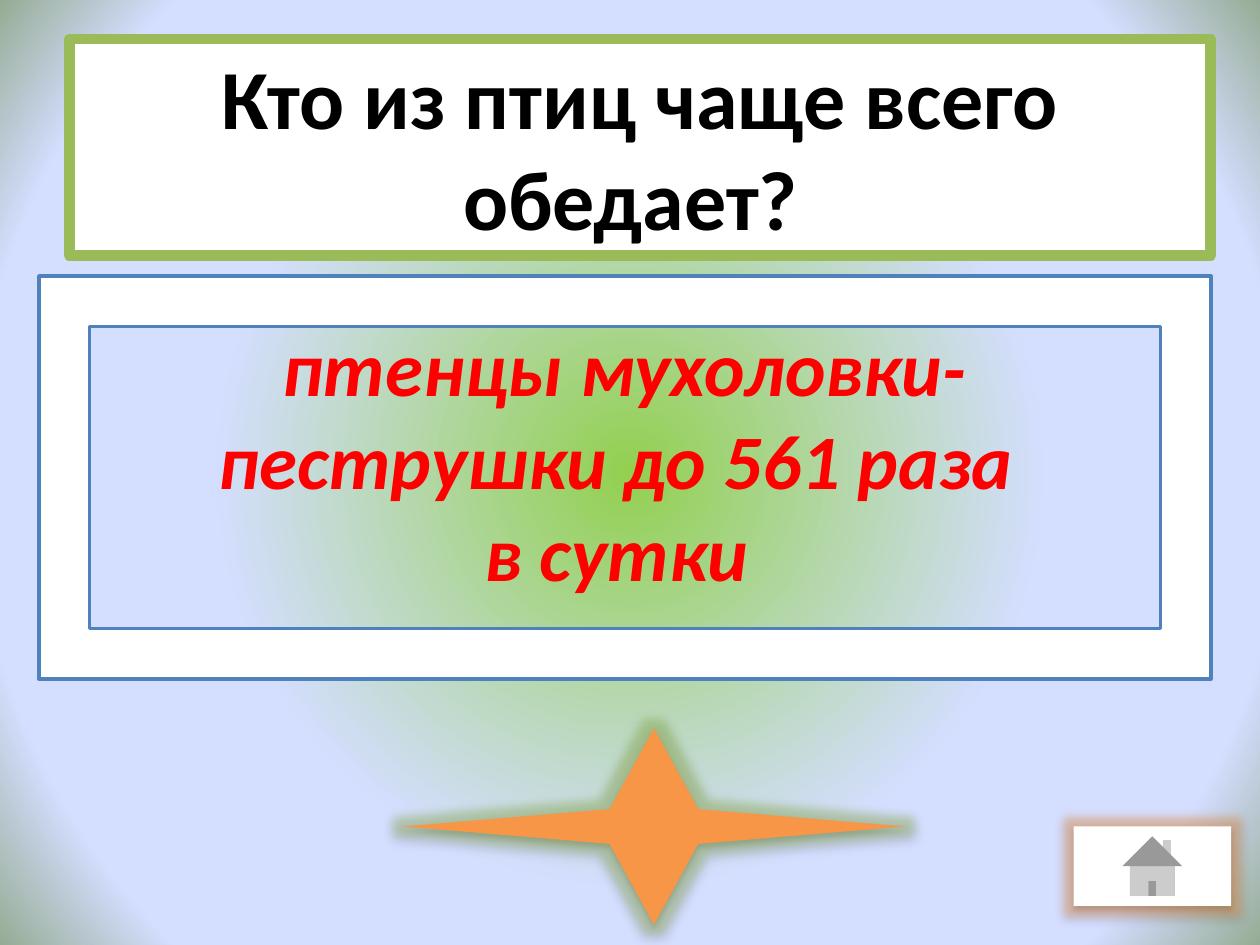
from lxml import etree
from pptx import Presentation
from pptx.dml.color import RGBColor
from pptx.enum import shapes, text
from pptx.oxml import parse_xml
from pptx.oxml.ns import nsdecls
from pptx.util import Inches, Pt

# Content
QUESTION = ["Кто из птиц чаще всего обедает?\u00a0"]
ANSWER = ["птенцы мухоловки-пеструшки до 561 раза ", "в сутки "]

THEME = {
    "font": "Calibri", "question_size": 48, "answer_size": 44,
    "black": "000000", "white": "FFFFFF", "red": "FF0000",
    "green": "9BBB59", "blue": "4F81BD", "orange": "F79646",
    # position %, colour, opacity %
    "background": [(0, "92D050", 67), (53, "D4DEFF", 100),
                   (83, "D4DEFF", 100), (100, "96AB94", 100)],
}


def add_box(page, kind, place, fill, line=None, width=0):
    box = page.shapes.add_shape(kind, *map(Inches, place))
    box.shadow.inherit = False
    box.fill.solid()
    box.fill.fore_color.rgb = RGBColor.from_string(fill)
    if line:
        box.line.color.rgb = RGBColor.from_string(line)
        box.line.width = Pt(width)
    else:
        box.line.fill.background()
    return box


def write(box, lines, *, size, color, italic=False,
          anchor=text.MSO_ANCHOR.TOP, bottom=0.05):
    frame = box.text_frame
    frame.word_wrap = True
    frame.vertical_anchor = anchor
    frame.margin_bottom = Inches(bottom)
    for index, line in enumerate(lines):
        para = frame.add_paragraph() if index else frame.paragraphs[0]
        para.alignment = text.PP_ALIGN.CENTER
        span = para.add_run()
        span.text = line
        span.font.name = THEME["font"]
        span.font.size = Pt(size)
        span.font.bold = True
        span.font.italic = italic
        span.font.color.rgb = RGBColor.from_string(color)


def add_glow(box, color):
    """Coloured glow with a soft shadow below."""
    properties = box.fill._xPr
    old = properties.find("{*}effectLst")
    properties.replace(old, parse_xml(
        f'<a:effectLst {nsdecls("a")}>'
        f'<a:glow rad="{Pt(11)}"><a:srgbClr val="{color}">'
        '<a:alpha val="40000"/></a:srgbClr></a:glow>'
        f'<a:outerShdw blurRad="{Pt(3.5)}" dist="{Pt(2.2)}" dir="5400000" '
        f'rotWithShape="0"><a:srgbClr val="{THEME["black"]}">'
        '<a:alpha val="32000"/></a:srgbClr></a:outerShdw></a:effectLst>'))


def paint_background(page):
    """Circular gradient spreading from the centre."""
    fill = page.background.fill
    fill.gradient()
    gradient = page._element.find(".//{*}gradFill")
    stops = "".join(
        f'<a:gs pos="{position * 1000}"><a:srgbClr val="{color}">'
        f'<a:alpha val="{opacity * 1000}"/></a:srgbClr></a:gs>'
        for position, color, opacity in THEME["background"])
    gradient.getparent().replace(gradient, parse_xml(
        f'<a:gradFill {nsdecls("a")} rotWithShape="1"><a:gsLst>{stops}</a:gsLst>'
        '<a:path path="circle"><a:fillToRect l="50000" t="50000" '
        'r="50000" b="50000"/></a:path></a:gradFill>'))


def main():
    deck = Presentation()
    deck.slide_width, deck.slide_height = Inches(10), Inches(7.5)
    page = deck.slides.add_slide(deck.slide_layouts[6])
    paint_background(page)
    kinds = shapes.MSO_SHAPE

    # Question
    question = add_box(page, kinds.RECTANGLE, (0.55, 0.31, 9.06, 1.72),
                       THEME["white"], THEME["green"], 6)
    write(question, QUESTION, size=THEME["question_size"], color=THEME["black"])

    # Star
    star = add_box(page, kinds.STAR_4_POINT, (3.2, 5.78, 3.98, 1.56),
                   THEME["orange"])
    add_glow(star, THEME["green"])

    # Answer, raised a little above the middle of its frame
    answer = add_box(page, kinds.FRAME, (0.31, 2.19, 9.3, 3.2),
                     THEME["white"], THEME["blue"], 2)
    write(answer, ANSWER, size=THEME["answer_size"], color=THEME["red"],
          italic=True, anchor=text.MSO_ANCHOR.MIDDLE, bottom=0.35)

    # Home button
    home = add_box(page, kinds.ACTION_BUTTON_HOME, (8.52, 6.56, 1.25, 0.63),
                   THEME["white"])
    add_glow(home, THEME["orange"])

    deck.save("out.pptx")


if __name__ == "__main__":
    main()
